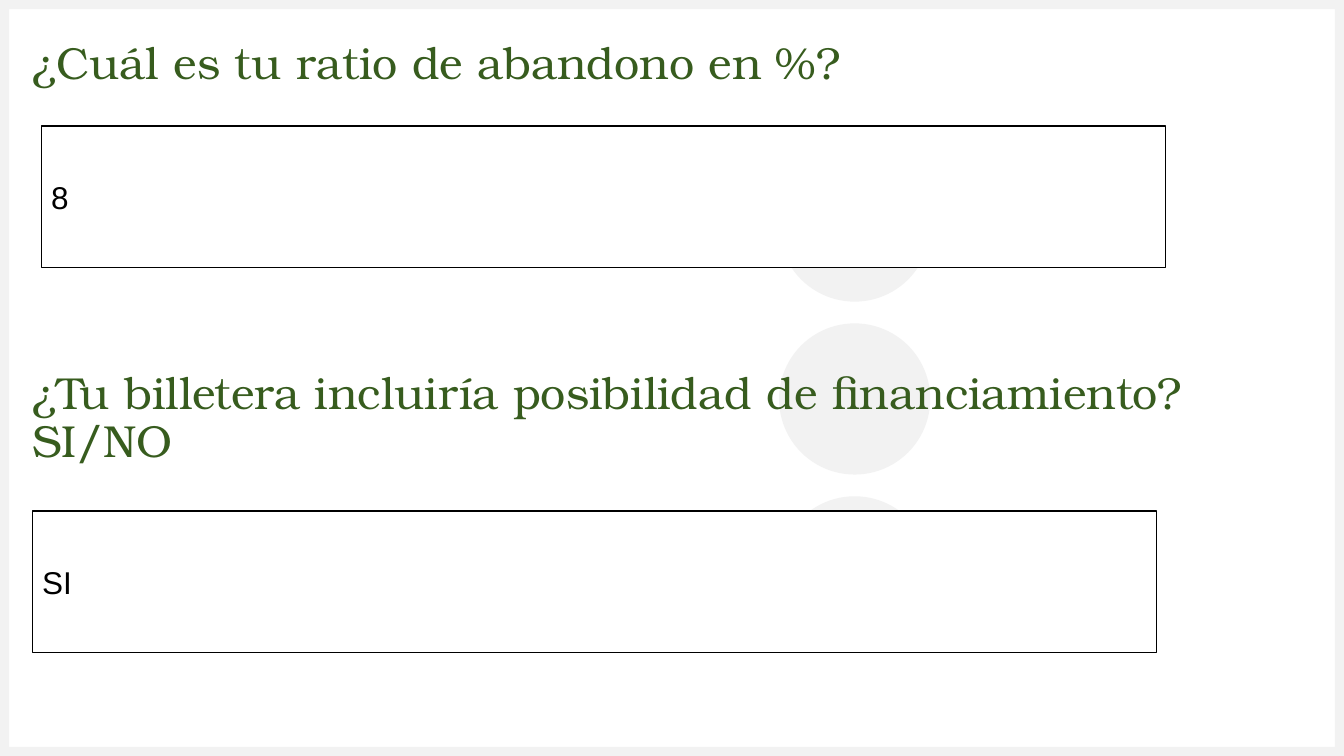
from pptx import Presentation
from pptx.dml.color import RGBColor
from pptx.enum.shapes import MSO_SHAPE
from pptx.enum.text import MSO_ANCHOR, MSO_AUTO_SIZE, PP_ALIGN
from pptx.util import Pt

QUESTIONS = [
    {"question": "¿Cuál es tu ratio de abandono en %?", "top": 29.5,
     "answer": "8", "box": (29.5, 90)},
    {"question": "¿Tu billetera incluiría posibilidad de financiamiento? SI/NO", "top": 282.25,
     "answer": "SI", "box": (23, 365)},
]

THEME = {
    "page": RGBColor(0xFF, 0xFF, 0xFF),
    "decoration": RGBColor(0xF2, 0xF2, 0xF2),
    "outline": RGBColor(0, 0, 0),
    "question": {"name": "TeX Gyre Bonum", "size": Pt(32), "bold": False,
                 "color": RGBColor(0x37, 0x5C, 0x1E)},
    "answer": {"name": "Arial", "size": Pt(22.5), "color": RGBColor(0, 0, 0)},
}

WIDTH, HEIGHT, BORDER = 960, 540, 6.5
CIRCLE_LEFT, CIRCLE_TOP, CIRCLE_SIZE, CIRCLE_STEP = 556.5, 107.5, 108, 123.5
QUESTION_LEFT, QUESTION_WIDTH, QUESTION_HEIGHT = 23, 893, 34
ANSWER_WIDTH, ANSWER_HEIGHT = 803, 101


def place(shape, left, top, width, height):
    """Move and resize a shape, in points."""
    for name, value in {"left": left, "top": top, "width": width, "height": height}.items():
        setattr(shape, name, Pt(value))


def write(shape, text, font_format, margin, line_spacing):
    """Put one left-aligned paragraph in a shape."""
    frame = shape.text_frame
    frame_format = {"word_wrap": True, "auto_size": MSO_AUTO_SIZE.NONE,
                    "vertical_anchor": MSO_ANCHOR.MIDDLE}
    for side in ("left", "top", "right", "bottom"):
        frame_format[f"margin_{side}"] = Pt(margin)
    for name, value in frame_format.items():
        setattr(frame, name, value)
    frame.text = text
    paragraph = frame.paragraphs[0]
    paragraph_format = {"alignment": PP_ALIGN.LEFT, "line_spacing": line_spacing,
                        "space_before": Pt(0)}
    for name, value in paragraph_format.items():
        setattr(paragraph, name, value)
    font = paragraph.runs[0].font
    for name, value in font_format.items():
        if name == "color":
            font.color.rgb = value
        else:
            setattr(font, name, value)


def add_shape(slide, kind, area, fill, line=None):
    """Add a flat filled shape with an optional thin outline."""
    shape = slide.shapes.add_shape(kind, *map(Pt, area))
    shape.shadow.inherit = False
    shape.fill.solid()
    shape.fill.fore_color.rgb = fill
    if line is None:
        shape.line.fill.background()
    else:
        shape.line.color.rgb = line
        shape.line.width = Pt(0.75)
    return shape


def add_decoration(slide):
    """Draw the page border and the column of circles."""
    borders = [(0, HEIGHT - BORDER, WIDTH, BORDER), (0, 0, WIDTH, BORDER),
               (0, 0, BORDER, HEIGHT), (WIDTH - BORDER, 0, BORDER, HEIGHT)]
    for area in borders:
        add_shape(slide, MSO_SHAPE.RECTANGLE, area, THEME["decoration"])
    for index in range(3):
        area = (CIRCLE_LEFT, CIRCLE_TOP + index * CIRCLE_STEP, CIRCLE_SIZE, CIRCLE_SIZE)
        add_shape(slide, MSO_SHAPE.OVAL, area, THEME["decoration"])


def main():
    """Build the slide with two questions and their answers."""
    presentation = Presentation()
    presentation.slide_width, presentation.slide_height = Pt(WIDTH), Pt(HEIGHT)
    slide = presentation.slides.add_slide(presentation.slide_layouts[5])
    slide.background.fill.solid()
    slide.background.fill.fore_color.rgb = THEME["page"]
    add_decoration(slide)
    for index, item in enumerate(QUESTIONS):
        heading = slide.shapes.add_textbox(0, 0, 0, 0) if index else slide.shapes.title
        place(heading, QUESTION_LEFT, item["top"], QUESTION_WIDTH, QUESTION_HEIGHT)
        write(heading, item["question"], THEME["question"], 0, 0.9)
        area = (*item["box"], ANSWER_WIDTH, ANSWER_HEIGHT)
        box = add_shape(slide, MSO_SHAPE.RECTANGLE, area, THEME["page"], THEME["outline"])
        write(box, item["answer"], THEME["answer"], 7.2, 1.0)
    presentation.save("out.pptx")


if __name__ == "__main__":
    main()
